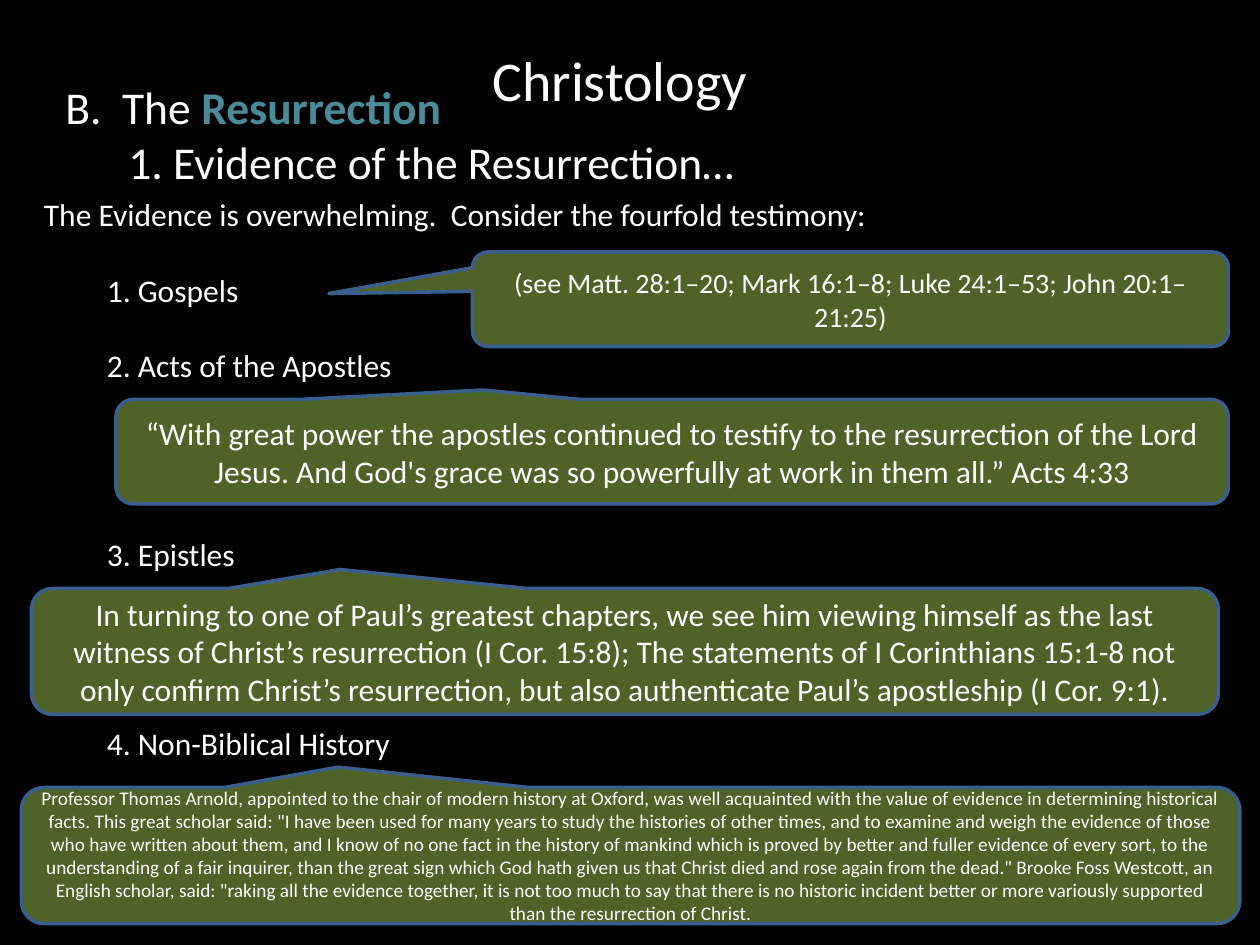
from typing import NamedTuple

from pptx import Presentation
from pptx import util as u
from pptx.dml.color import RGBColor
from pptx.enum import shapes, text

COLORS = {
    "background": "000000",
    "text": "FFFFFF",
    "accent": "4A8B9A",
    "callout": "4F6228",
    "outline": "3A5F8C",
}
FONT = "Calibri"
LIST_SIZE = 18
BLANK_LINE = 1.2 * LIST_SIZE


class Box(NamedTuple):
    left: float
    top: float
    width: float
    height: float


class Callout(NamedTuple):
    box: Box
    tip: tuple[float, float]
    size: int
    words: str


class Point(NamedTuple):
    words: str
    lines_before: int


GOSPELS = Callout(
    Box(3.75, 2, 6, 0.75), (-0.69, -0.06), 16,
    "(see Matt. 28:1–20; Mark 16:1–8; Luke 24:1–53; John 20:1–21:25)",
)
LOWER_CALLOUTS = [
    Callout(
        Box(0.92, 3.17, 8.83, 0.83), (-0.17, -0.59), 18,
        "“With great power the apostles continued to testify to the resurrection "
        "of the Lord Jesus. And God's grace was so powerfully at work in them "
        "all.” Acts 4:33",
    ),
    Callout(
        Box(0.25, 4.67, 9.42, 1), (-0.24, -0.65), 18,
        "In turning to one of Paul’s greatest chapters, we see him viewing himself "
        "as the last witness of Christ’s resurrection (I Cor. 15:8); The statements "
        "of I Corinthians 15:1-8 not only confirm Christ’s resurrection, but also "
        "authenticate Paul’s apostleship (I Cor. 9:1).",
    ),
    Callout(
        Box(0.17, 6.25, 9.67, 1.08), (-0.24, -0.65), 11,
        "Professor Thomas Arnold, appointed to the chair of modern history at "
        "Oxford, was well acquainted with the value of evidence in determining "
        "historical facts. This great scholar said: \"I have been used for many "
        "years to study the histories of other times, and to examine and weigh the "
        "evidence of those who have written about them, and I know of no one fact "
        "in the history of mankind which is proved by better and fuller evidence of "
        "every sort, to the understanding of a fair inquirer, than the great sign "
        "which God hath given us that Christ died and rose again from the dead.\" "
        "Brooke Foss Westcott, an English scholar, said: \"raking all the evidence "
        "together, it is not too much to say that there is no historic incident "
        "better or more variously supported than the resurrection of Christ.",
    ),
]
TESTIMONY = [
    Point("The Evidence is overwhelming.  Consider the fourfold testimony:", 0),
    Point("\t1. Gospels", 1),
    Point("\t2. Acts of the Apostles", 1),
    Point("\t3. Epistles", 4),
    Point("\t4. Non-Biblical History", 4),
]


def color(name: str) -> RGBColor:
    return RGBColor.from_string(COLORS[name])


def inches(box: Box) -> list[u.Length]:
    return [u.Inches(length) for length in box]


def add_run(paragraph, words: str, size: int, ink: str = "text", bold: bool = False) -> None:
    run = paragraph.add_run()
    run.text = words
    run.font.name = FONT
    run.font.size = u.Pt(size)
    run.font.bold = bold
    run.font.color.rgb = color(ink)


def add_text_frame(slide, box: Box):
    frame = slide.shapes.add_textbox(*inches(box)).text_frame
    frame.word_wrap = True
    return frame


def add_title(slide) -> None:
    frame = add_text_frame(slide, Box(0.67, 0, 8.5, 1.25))
    frame.vertical_anchor = text.MSO_ANCHOR.MIDDLE
    paragraph = frame.paragraphs[0]
    paragraph.alignment = text.PP_ALIGN.CENTER
    add_run(paragraph, "Christology", 32)


def add_heading(slide) -> None:
    paragraph = add_text_frame(slide, Box(0.42, 0.58, 9.08, 0.98)).paragraphs[0]
    add_run(paragraph, "B.  The ", 26)
    add_run(paragraph, "Resurrection", 26, "accent", bold=True)
    paragraph.add_line_break()
    add_run(paragraph, "\t1. Evidence of the Resurrection…", 26)


def add_testimony(slide) -> None:
    frame = add_text_frame(slide, Box(0.25, 1.5, 9.58, 4.95))
    for index, point in enumerate(TESTIMONY):
        paragraph = frame.add_paragraph() if index else frame.paragraphs[0]
        paragraph.space_before = u.Pt(point.lines_before * BLANK_LINE)
        add_run(paragraph, point.words, LIST_SIZE)


def add_callout(slide, callout: Callout) -> None:
    """Draw a rounded callout; its tip is a fraction of the size from the centre."""
    shape = slide.shapes.add_shape(
        shapes.MSO_SHAPE.ROUNDED_RECTANGULAR_CALLOUT, *inches(callout.box)
    )
    shape.adjustments[0], shape.adjustments[1] = callout.tip
    shape.shadow.inherit = False
    shape.fill.solid()
    shape.fill.fore_color.rgb = color("callout")
    shape.line.color.rgb = color("outline")
    shape.line.width = u.Pt(2)
    frame = shape.text_frame
    frame.word_wrap = True
    frame.vertical_anchor = text.MSO_ANCHOR.MIDDLE
    paragraph = frame.paragraphs[0]
    paragraph.alignment = text.PP_ALIGN.CENTER
    add_run(paragraph, callout.words, callout.size)


def main() -> None:
    presentation = Presentation()
    presentation.slide_width = u.Inches(10)
    presentation.slide_height = u.Inches(7.5)
    slide = presentation.slides.add_slide(presentation.slide_layouts[6])
    slide.background.fill.solid()
    slide.background.fill.fore_color.rgb = color("background")

    add_title(slide)
    add_heading(slide)
    add_callout(slide, GOSPELS)
    add_testimony(slide)
    for callout in LOWER_CALLOUTS:
        add_callout(slide, callout)
    presentation.save("out.pptx")


if __name__ == "__main__":
    main()
